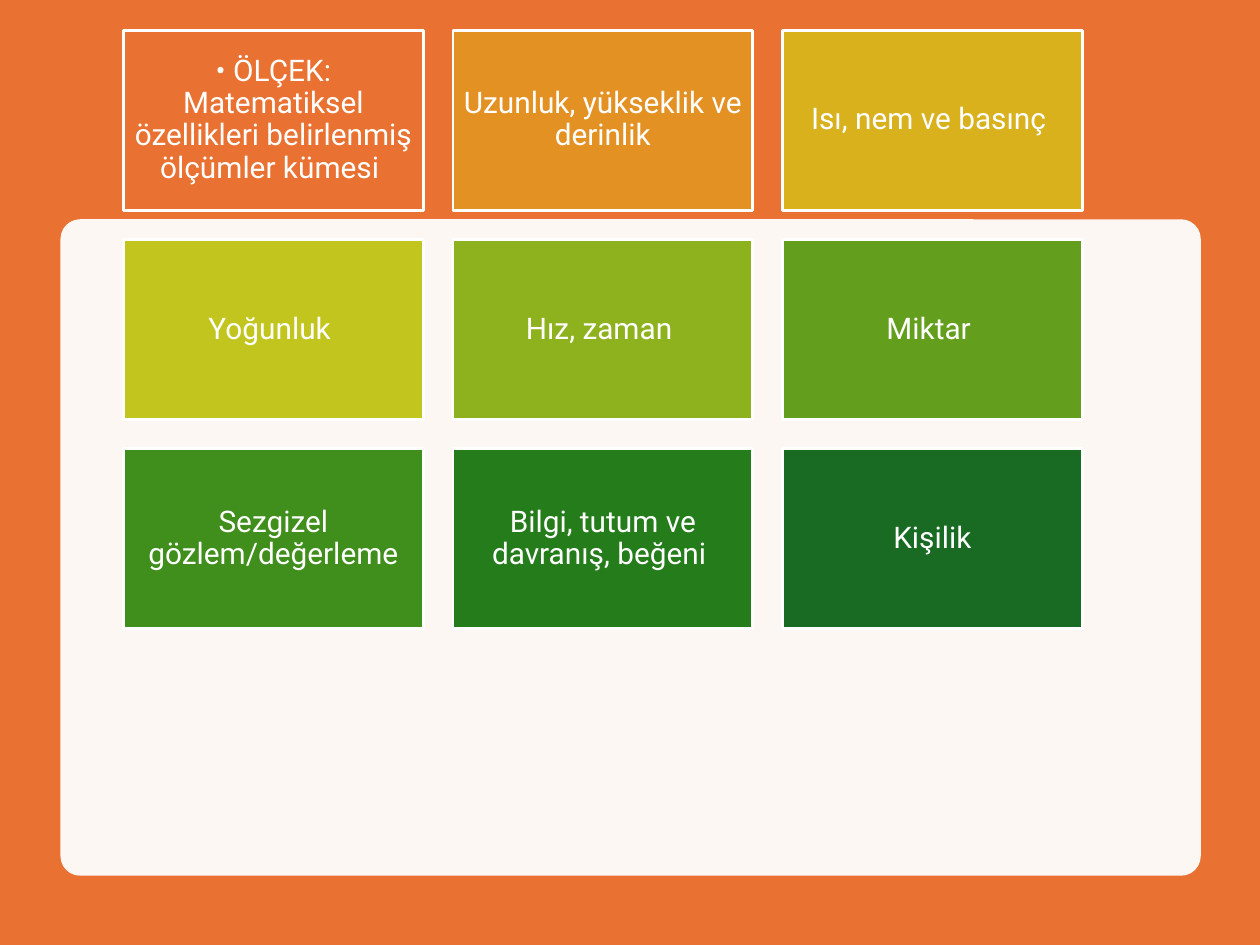
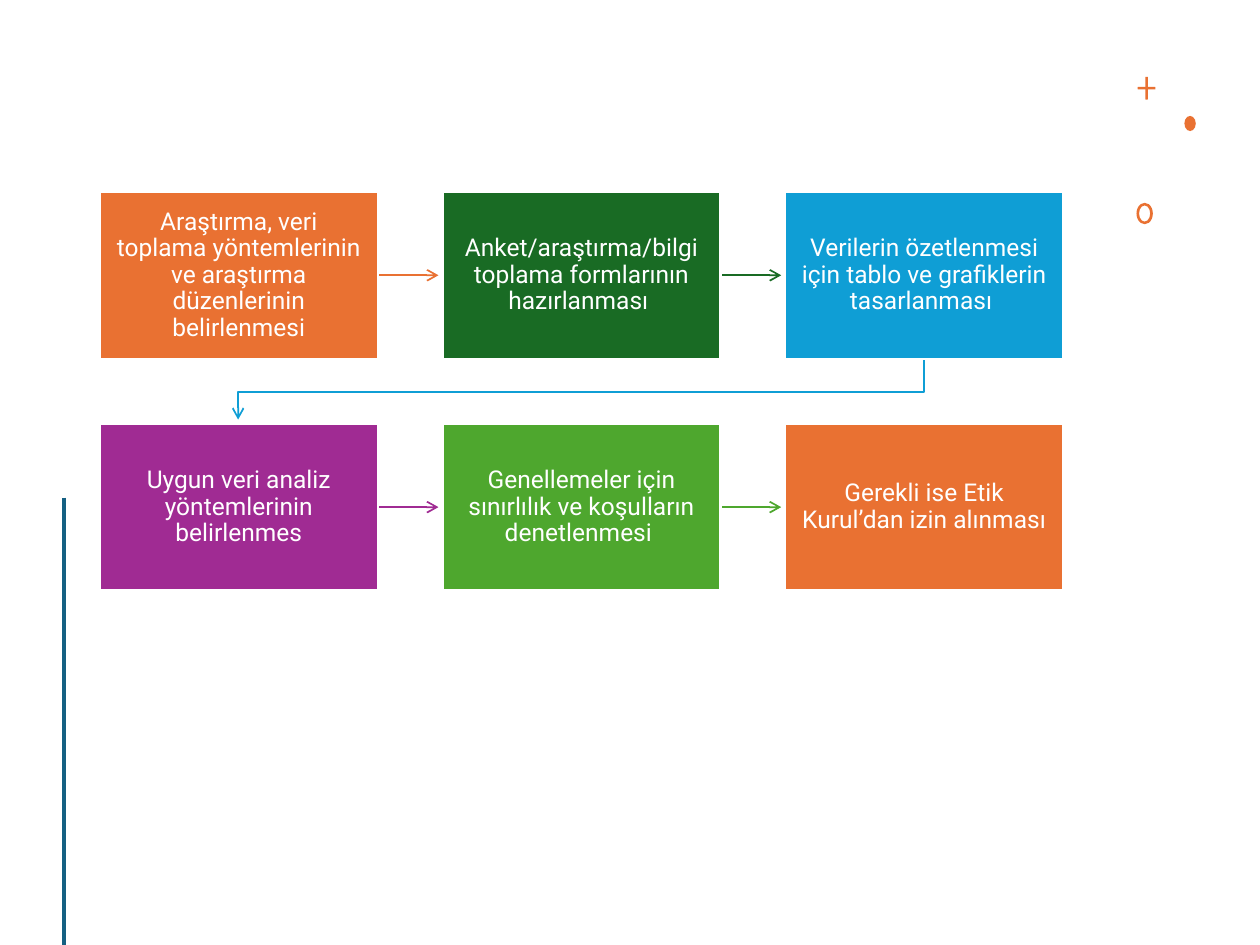
"""Build two slides: a grid of measurement scales and a research planning flow."""
from lxml.etree import SubElement
from pptx import Presentation
from pptx.dml.color import RGBColor
from pptx.enum.shapes import MSO_CONNECTOR as Link, MSO_SHAPE as Preset
from pptx.enum.text import MSO_ANCHOR as Anchor, PP_ALIGN as Align
from pptx.oxml.ns import qn
from pptx.util import Inches, Pt

FONT = "Roboto"
WHITE, ORANGE, GREEN, TEAL = "FFFFFF", "E97132", "196B24", "156082"
COLUMNS = 3


def add_filled(slide, preset, left, top, width, height, color):
    shape = slide.shapes.add_shape(
        preset, Inches(left), Inches(top), Inches(width), Inches(height))
    shape.shadow.inherit = False
    shape.fill.solid()
    shape.fill.fore_color.rgb = RGBColor.from_string(color)
    shape.line.fill.background()
    return shape


def add_card(slide, left, top, width, height, color, text, size, margin):
    card = add_filled(slide, Preset.RECTANGLE, left, top, width, height, color)
    card.line.color.rgb = RGBColor.from_string(WHITE)
    card.line.width = Pt(1.5)
    frame = card.text_frame
    frame.word_wrap = True
    frame.vertical_anchor = Anchor.MIDDLE
    frame.margin_left = frame.margin_right = Inches(margin)
    frame.margin_top = frame.margin_bottom = Inches(margin)
    frame.text = text
    paragraph = frame.paragraphs[0]
    paragraph.alignment = Align.CENTER
    paragraph.line_spacing = 0.9
    font = paragraph.runs[0].font
    font.name, font.size = FONT, Pt(size)
    font.color.rgb = RGBColor.from_string(WHITE)


deck = Presentation()
deck.slide_width, deck.slide_height = Inches(10), Inches(7.5)
blank = deck.slide_layouts[6]

scales = deck.slides.add_slide(blank)
add_filled(scales, Preset.RECTANGLE, 0, 0, 10, 7.5, ORANGE)
panel = add_filled(scales, Preset.ROUNDED_RECTANGLE, 0.48, 1.74, 9.05, 5.21, WHITE)
panel.adjustments[0] = 0.03
panel_color = panel.fill._xPr.find(qn("a:solidFill"))[0]
SubElement(panel_color, qn("a:alpha"), val="95000")

measures = [
    ("• ÖLÇEK: Matematiksel özellikleri belirlenmiş ölçümler kümesi ", ORANGE),
    ("Uzunluk, yükseklik ve derinlik", "E49124"),
    ("Isı, nem ve basınç ", "D8B11D"),
    ("Yoğunluk ", "C2C51E"),
    ("Hız, zaman ", "8EB21E"),
    ("Miktar ", "639F1D"),
    ("Sezgizel gözlem/değerleme", "408E1C"),
    ("Bilgi, tutum ve davranış, beğeni ", "247C1B"),
    ("Kişilik", GREEN),
]
for index, (measure, color) in enumerate(measures):
    row, column = divmod(index, COLUMNS)
    add_card(scales, 0.98 + 2.615 * column, 0.24 + 1.66 * row, 2.38, 1.43,
             color, measure, 17, 0.07)

planning = deck.slides.add_slide(blank)
for left, top, width, height in [(9.09, 0.61, 0.02, 0.18), (9.03, 0.69, 0.14, 0.02)]:
    add_filled(planning, Preset.ROUNDED_RECTANGLE, left, top, width, height, ORANGE)
add_filled(planning, Preset.OVAL, 9.4, 0.92, 0.09, 0.12, ORANGE)
ring = add_filled(planning, Preset.DONUT, 9.02, 1.61, 0.13, 0.17, ORANGE)
ring.adjustments[0] = 0.16

side_rule = planning.shapes.add_connector(
    Link.STRAIGHT, Inches(0.51), Inches(3.95), Inches(0.51), Inches(7.5))
strokes = [(side_rule, TEAL, 2, False)]

steps = [
    ("Araştırma, veri toplama yöntemlerinin ve araştırma düzenlerinin belirlenmesi", ORANGE),
    ("Anket/araştırma/bilgi toplama formlarının hazırlanması ", GREEN),
    ("Verilerin özetlenmesi için tablo ve grafiklerin tasarlanması ", "0F9ED5"),
    ("Uygun veri analiz yöntemlerinin belirlenmes", "A02B93"),
    ("Genellemeler için sınırlılık ve koşulların denetlenmesi ", "4EA72E"),
    ("Gerekli ise Etik Kurul’dan izin alınması", ORANGE),
]
step_width, step_height = 2.21, 1.33
for index, (step, color) in enumerate(steps):
    row, column = divmod(index, COLUMNS)
    left, top = 0.79 + 2.72 * column, 1.52 + 1.84 * row
    right, middle = left + step_width, top + step_height / 2
    if column < COLUMNS - 1:
        arrow = planning.shapes.add_connector(
            Link.STRAIGHT, Inches(right), Inches(middle), Inches(right + 0.48), Inches(middle))
        strokes.append((arrow, color, 1, True))
    elif row == 0:
        start_x, end_x = Inches(left + step_width / 2), Inches(1.89)
        turn = planning.shapes.build_freeform(start_x, Inches(2.85))
        turn.add_line_segments(
            [(start_x, Inches(3.11)), (end_x, Inches(3.11)), (end_x, Inches(3.33))], close=False)
        return_arrow = turn.convert_to_shape()
        return_arrow.fill.background()
        strokes.append((return_arrow, color, 1, True))
    add_card(planning, left, top, step_width, step_height, color, step, 14, 0.11)

for stroke, color, width, has_arrowhead in strokes:
    stroke.line.color.rgb = RGBColor.from_string(color)
    stroke.line.width = Pt(width)
    if has_arrowhead:
        SubElement(stroke.get_or_add_ln(), qn("a:tailEnd"), type="arrow")
    SubElement(stroke._element.spPr, qn("a:effectLst"))

deck.save("out.pptx")
